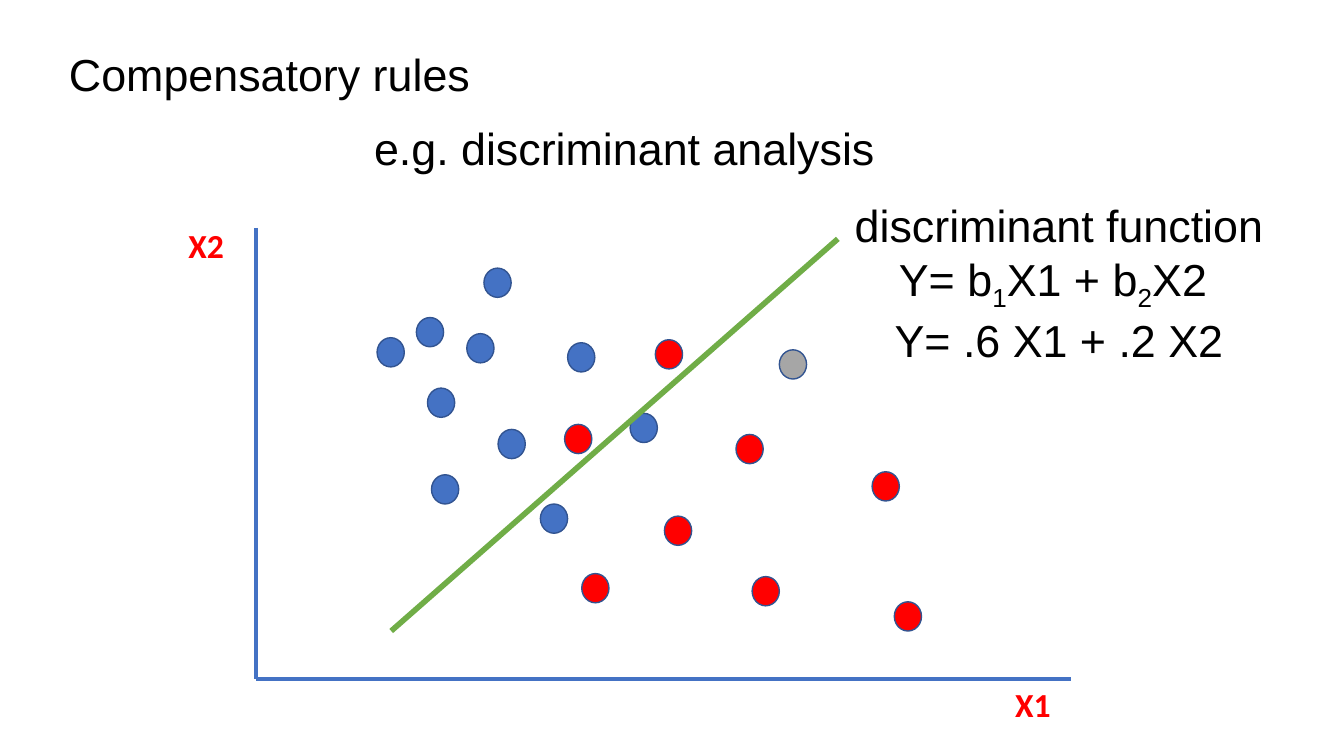
"""Build the slide on compensatory rules with its scatter of two groups."""
from lxml.etree import SubElement
from pptx import Presentation
from pptx.dml.color import RGBColor as Rgb
from pptx.enum.shapes import MSO_CONNECTOR as Link, MSO_SHAPE as Shape
from pptx.enum.text import MSO_ANCHOR as Anchor, MSO_AUTO_SIZE as Fit, PP_ALIGN as Align
from pptx.oxml.ns import qn
from pptx.util import Inches, Pt

HUES = {"blue": "4472C4", "edge": "325491", "red": "FF0000",
        "grey": "A6A6A6", "green": "70AD47", "black": "000000"}
BLUE = [(3.74, 3.35), (4.63, 3.31), (4.13, 3.15), (4.24, 3.85), (4.8, 2.66),
        (4.28, 4.71), (6.25, 4.1), (4.94, 4.26), (5.36, 5), (5.63, 3.4)]
RED = [(5.6, 4.21), (6.5, 3.37), (5.77, 5.69), (7.3, 4.31),
       (6.59, 5.12), (7.46, 5.72), (8.65, 4.68), (8.87, 5.97)]
GREY = [(7.73, 3.47)]
RULE = [["discriminant function"],
        ["Y= b", "1", "X1 + b", "2", "X2 "],
        ["Y= .6 X1 + .2 X2"]]


def hue(name):
    """Return the named colour."""
    return Rgb.from_string(HUES[name])


def write(box, rows, size=32, font="Arial", color="black", bold=False,
          align=Align.CENTER, wrap=True):
    """Fill a box with rows of runs, where every second run is a subscript."""
    frame = box.text_frame
    frame.word_wrap = wrap
    frame.auto_size = Fit.SHAPE_TO_FIT_TEXT
    frame.vertical_anchor = Anchor.TOP
    for i, row in enumerate(rows):
        para = frame.add_paragraph() if i else frame.paragraphs[0]
        para.alignment = align
        for j, text in enumerate(row):
            run = para.add_run()
            run.text = text
            run.font.size = Pt(size)
            run.font.name = font
            run.font.bold = bold
            run.font.color.rgb = hue(color)
            if j % 2:
                run.font._element.set("baseline", "-25000")


def label(slide, spot, rows, **style):
    """Add a text box."""
    box = slide.shapes.add_textbox(*map(Inches, spot))
    write(box, rows, **style)


def line(slide, start, end, color, width):
    """Add a straight line without a shadow."""
    link = slide.shapes.add_connector(Link.STRAIGHT, *map(Inches, start + end))
    link.line.color.rgb = hue(color)
    link.line.width = Pt(width)
    SubElement(link._element.spPr, qn("a:effectLst"))


def dots(slide, spots, color):
    """Add one group of data points."""
    for x, y in spots:
        dot = slide.shapes.add_shape(Shape.OVAL, *map(Inches, (x, y, 0.27, 0.29)))
        dot.shadow.inherit = False
        dot.fill.solid()
        dot.fill.fore_color.rgb = hue(color)
        dot.line.color.rgb = hue("edge")
        dot.line.width = Pt(1)


def title(slide, spot, text):
    """Place and fill the title."""
    head = slide.shapes.title
    head.left, head.top, head.width, head.height = map(Inches, spot)
    write(head, [[text]], wrap=False)


def main():
    """Build and save the slide."""
    deck = Presentation()
    deck.slide_width, deck.slide_height = Inches(13.33), Inches(7.5)
    slide = deck.slides.add_slide(deck.slide_layouts[5])
    title(slide, (0.57, 0.41, 4.21, 0.64), "Compensatory rules")
    label(slide, (1.77, 1.15, 8.85, 0.64), [["e.g. discriminant analysis"]])
    zero = (2.54, 6.74)
    line(slide, (2.54, 2.26), zero, "blue", 2.75)
    line(slide, zero, (10.62, 6.74), "blue", 2.75)
    dots(slide, BLUE, "blue")
    dots(slide, RED, "red")
    for text, x, y in (("X1", 9.97, 6.74), ("X2", 1.77, 2.18)):
        label(slide, (x, y, 0.65, 0.5), [[text]], size=24, font="Calibri",
              color="red", bold=True, align=Align.LEFT)
    line(slide, (3.88, 6.26), (8.31, 2.37), "green", 4)
    label(slide, (8.31, 1.91, 4.39, 1.72), RULE)
    dots(slide, GREY, "grey")
    deck.save("out.pptx")


if __name__ == "__main__":
    main()
